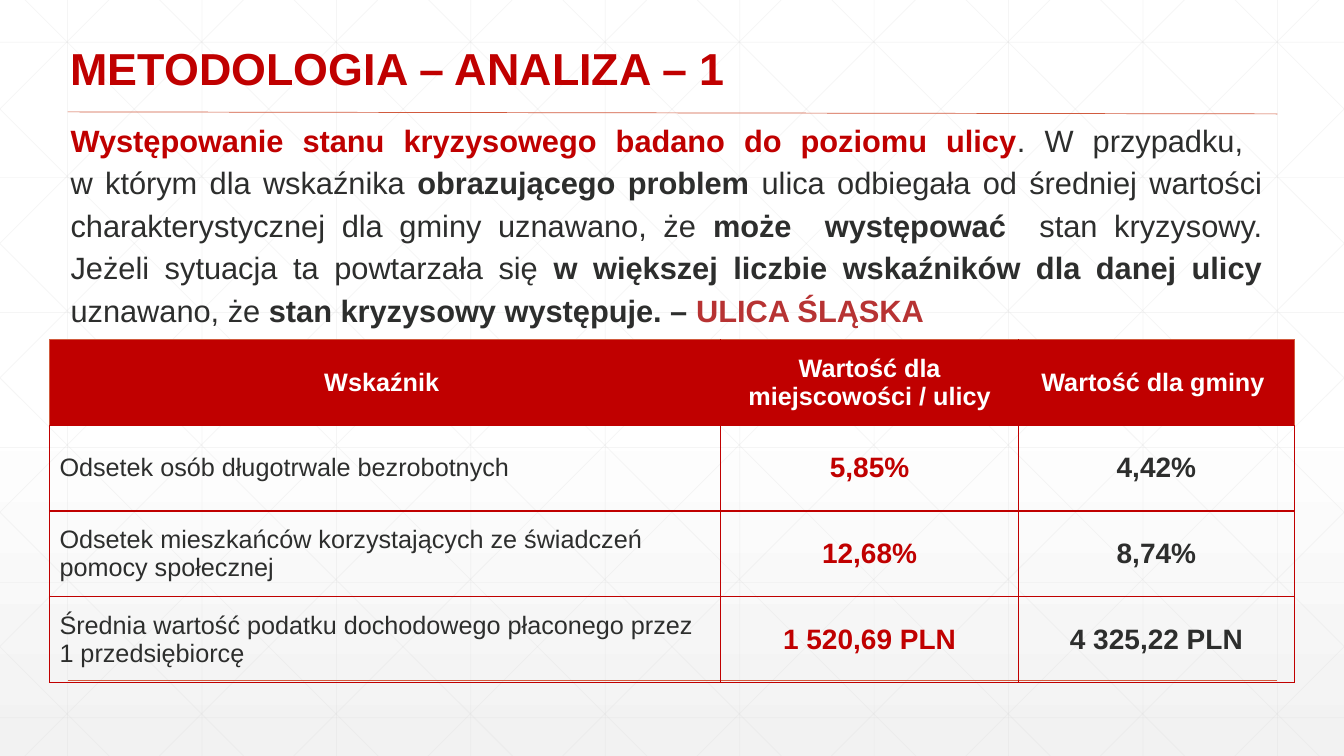
import pptx
import pptx.util
import pptx.dml.color
import pptx.enum.text
import pptx.enum.shapes
import pptx.oxml.ns
from lxml import etree

Inches, Pt = pptx.util.Inches, pptx.util.Pt
ALIGN, ANCHOR = pptx.enum.text.PP_ALIGN, pptx.enum.text.MSO_ANCHOR
qn = pptx.oxml.ns.qn

# Content
FONT = "Arial"
COLORS = {"red": "C00000", "brick": "B73333", "accent": "D15A3E", "text": "2D2E2D",
          "white": "FFFFFF", "shade": "F2F2F2", "grid": "D9D9D9"}
TITLE = "METODOLOGIA – ANALIZA – 1"
BODY = [  # text, colour, bold; None is a line break
    ("Występowanie stanu kryzysowego badano do poziomu ulicy", "red", True),
    (". W przypadku, ", "text", False),
    None,
    ("w którym dla wskaźnika ", "text", False),
    ("obrazującego problem ", "text", True),
    ("ulica odbiegała od średniej wartości charakterystycznej dla gminy uznawano, że ",
     "text", False),
    ("może  występować  ", "text", True),
    ("stan kryzysowy. Jeżeli sytuacja ta powtarzała się ", "text", False),
    ("w większej liczbie wskaźników dla danej ulicy ", "text", True),
    ("uznawano, że ", "text", False),
    ("stan kryzysowy występuje. – ", "text", True),
    ("ULICA ŚLĄSKA", "brick", True),
]
ROWS = [
    ("Wskaźnik ", "Wartość dla miejscowości / ulicy", "Wartość dla gminy "),
    ("Odsetek osób długotrwale bezrobotnych", "5,85%", "4,42%"),
    ("Odsetek mieszkańców korzystających ze świadczeń pomocy społecznej", "12,68%", "8,74%"),
    ("Średnia wartość podatku dochodowego płaconego przez 1 przedsiębiorcę",
     "1 520,69 PLN", "4 325,22 PLN"),
]
COL_WIDTHS = (6.66, 2.95, 2.74)
ROW_HEIGHT = 0.85
# colour, size, bold, alignment for each column
HEADER_STYLE = ("white", 18, True, ALIGN.CENTER)
COLUMN_STYLES = [("text", 18, False, ALIGN.LEFT),
                 ("red", 20, True, ALIGN.CENTER),
                 ("text", 20, True, ALIGN.CENTER)]
WIDTH, HEIGHT = 13.33, 7.5
STEP_X, STEP_Y = 4 / 3, 1.34


def rgb(name):
    return pptx.dml.color.RGBColor.from_string(COLORS[name])


def style_font(font, color, size, bold):
    font.name, font.size, font.bold = FONT, Pt(size), bold
    font.color.rgb = rgb(color)


def add_line(s, x1, y1, x2, y2, color, width, alpha=None):
    line = s.shapes.add_connector(pptx.enum.shapes.MSO_CONNECTOR.STRAIGHT,
                                  Inches(x1), Inches(y1), Inches(x2), Inches(y2))
    line.line.color.rgb = rgb(color)
    line.line.width = Pt(width)
    sp_pr = line.element.spPr
    if alpha:
        clr = next(sp_pr.iter(qn("a:srgbClr")))
        etree.SubElement(clr, qn("a:alpha"), val=str(alpha * 1000))
    etree.SubElement(sp_pr, qn("a:effectLst"))


def add_grid(s):
    def grid_line(*ends):
        add_line(s, *ends, "grid", 0.5, 25)

    for i in range(10):
        x = 0.67 + STEP_X * i
        grid_line(x, 0, x, HEIGHT)
    for i in range(6):
        y = 0.42 + STEP_Y * i
        grid_line(0, y, WIDTH, y)
    # Diagonals at 45 degrees, cut at the slide edges, each with its mirror
    for i in range(-5, 10):
        x = 0.25 + STEP_X * i
        top, bottom = max(0, -x), min(HEIGHT, WIDTH - x)
        grid_line(x + top, top, x + bottom, bottom)
        grid_line(WIDTH - x - top, top, WIDTH - x - bottom, bottom)


def place(shape, left, top, width, height):
    shape.left, shape.top = Inches(left), Inches(top)
    shape.width, shape.height = Inches(width), Inches(height)


def set_border(cell, side, color, width):
    ln = etree.SubElement(cell._tc.get_or_add_tcPr(), qn("a:ln" + side), w=str(Pt(width)))
    fill = etree.SubElement(ln, qn("a:solidFill"))
    etree.SubElement(fill, qn("a:srgbClr"), val=COLORS[color])


def fill_table(table):
    for c, width in enumerate(COL_WIDTHS):
        table.columns[c].width = Inches(width)
    last = len(COL_WIDTHS) - 1
    for r, row in enumerate(ROWS):
        table.rows[r].height = Inches(ROW_HEIGHT)
        for c, text in enumerate(row):
            cell = table.cell(r, c)
            header_edges = {"L": c == 0, "R": c == last, "T": True, "B": False}
            for side, is_edge in header_edges.items():
                thin = r == 0 and is_edge
                set_border(cell, side, "accent" if thin else "red", 0.5 if thin else 1)
            if r == 0:
                cell.fill.solid()
                cell.fill.fore_color.rgb = rgb("red")
            else:
                cell.fill.background()
            color, size, bold, align = HEADER_STYLE if r == 0 else COLUMN_STYLES[c]
            cell.vertical_anchor = ANCHOR.MIDDLE
            cell.text = text
            p = cell.text_frame.paragraphs[0]
            p.alignment = align
            style_font(p.font, color, size, bold)


def main():
    prs = pptx.Presentation()
    prs.slide_width, prs.slide_height = Inches(WIDTH), Inches(HEIGHT)
    s = prs.slides.add_slide(prs.slide_layouts[1])

    # Background
    fill = s.background.fill
    fill.gradient()
    fill.gradient_angle = 270
    for stop, color, position in zip(fill.gradient_stops, ("white", "shade"), (0.53, 1)):
        stop.color.rgb = rgb(color)
        stop.position = position
    add_grid(s)
    add_line(s, 0.67, 6.75, 12.67, 6.75, "accent", 1)
    add_line(s, 0.67, 1.11, 12.67, 1.13, "accent", 0.5)

    # Title and body, raised above the grid
    title, body = s.shapes.title, s.placeholders[1]
    for shape in (title, body):
        s.shapes.element.append(shape.element)
        shape.text_frame.word_wrap = True
        shape.text_frame.auto_size = pptx.enum.text.MSO_AUTO_SIZE.NONE

    place(title, 0.6, 0.22, 11.32, 0.77)
    title.text_frame.text = TITLE
    title.text_frame.vertical_anchor = ANCHOR.BOTTOM
    p = title.text_frame.paragraphs[0]
    p.alignment, p.line_spacing = ALIGN.LEFT, 0.9
    style_font(p.font, "red", 32, True)

    place(body, 0.6, 1.1, 12.02, 2.14)
    p = body.text_frame.paragraphs[0]
    p.alignment, p.line_spacing, p.space_before = ALIGN.JUSTIFY, 1.15, Pt(0)
    p_pr = p._p.get_or_add_pPr()
    p_pr.set("marL", "0")
    p_pr.set("indent", "0")
    etree.SubElement(p_pr, qn("a:buNone"))
    for part in BODY:
        if part is None:
            p.add_line_break()
            continue
        text, color, bold = part
        r = p.add_run()
        r.text = text
        style_font(r.font, color, 22, bold)

    # Table of indicators
    frame = s.shapes.add_table(len(ROWS), len(COL_WIDTHS), Inches(0.49), Inches(3.37),
                               Inches(sum(COL_WIDTHS)), Inches(ROW_HEIGHT * len(ROWS)))
    fill_table(frame.table)

    prs.save("out.pptx")


if __name__ == "__main__":
    main()
